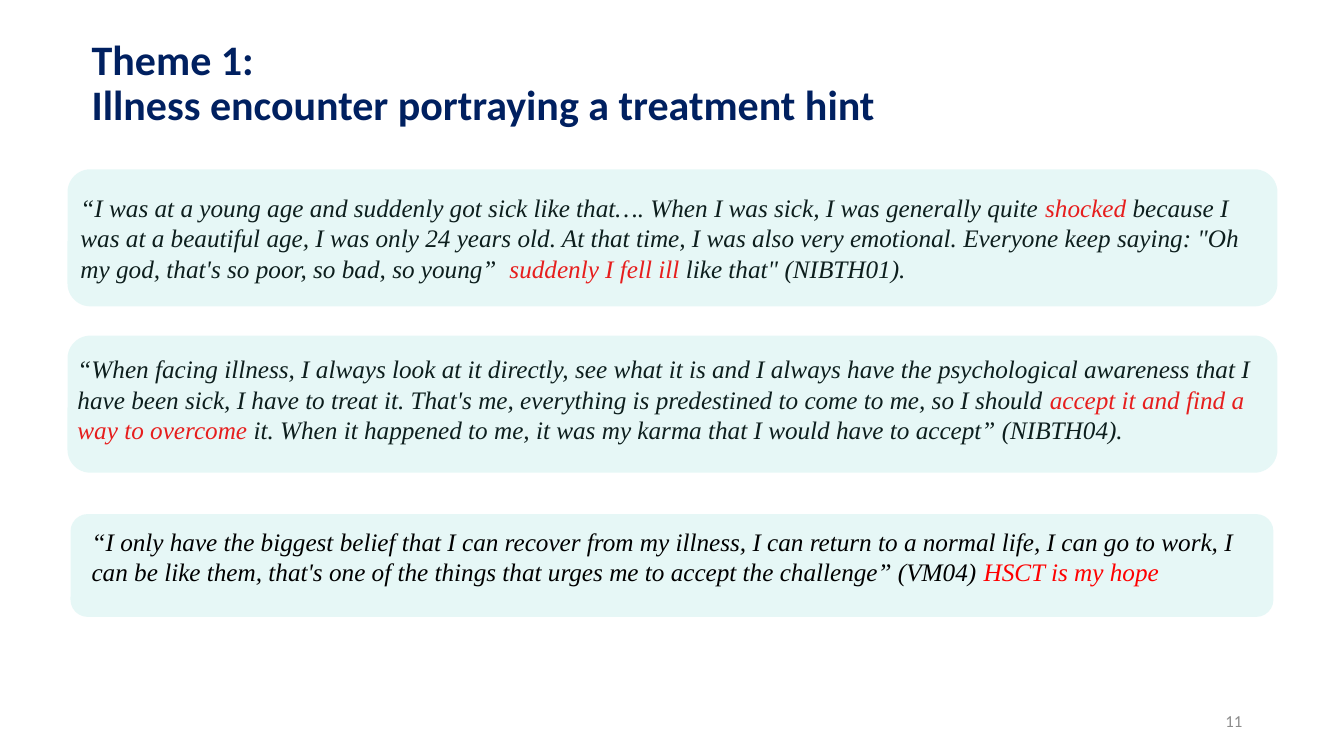
from dataclasses import dataclass
from typing import NamedTuple

from lxml import etree
from pptx import Presentation
from pptx.dml.color import RGBColor
from pptx.enum.shapes import MSO_SHAPE
from pptx.enum.text import MSO_ANCHOR, MSO_AUTO_SIZE, PP_ALIGN
from pptx.oxml.ns import qn
from pptx.slide import Slide
from pptx.text.text import TextFrame, _Paragraph
from pptx.util import Emu, Pt

PX = 9144  # 100 px to the inch
PANEL = MSO_SHAPE.FLOWCHART_ALTERNATE_PROCESS
TOP, MIDDLE = MSO_ANCHOR.TOP, MSO_ANCHOR.MIDDLE
LEFT, RIGHT = PP_ALIGN.LEFT, PP_ALIGN.RIGHT
FIXED, GROW = MSO_AUTO_SIZE.NONE, MSO_AUTO_SIZE.SHAPE_TO_FIT_TEXT


class Box(NamedTuple):
    left: int
    top: int
    width: int
    height: int

    def emu(self) -> list[Emu]:
        return [Emu(side * PX) for side in self]


@dataclass(frozen=True)
class Style:
    font: str
    size: int
    color: str
    bold: bool = False
    italic: bool = False


@dataclass(frozen=True)
class Theme:
    title: Style = Style("Calibri", 30, "002060", bold=True)
    quote: Style = Style("Times New Roman", 18, "000000", italic=True)
    accent: Style = Style("Times New Roman", 18, "FF0000", italic=True)
    number: Style = Style("Calibri", 12, "8C8C8C")
    panel: str = "5BCEC7"
    alpha: int = 15


class Run(NamedTuple):
    text: str
    style: Style


class Quote(NamedTuple):
    box: Box
    runs: list[Run]


THEME = Theme()
BODY, KEY = THEME.quote, THEME.accent

TITLE = ["Theme 1:", "Illness encounter portraying a treatment hint"]

SHOCK = Quote(Box(70, 186, 1187, 101), [
    Run("“I was at a young age and suddenly got sick like that…. "
        "When I was sick, I was generally quite ", BODY),
    Run("shocked ", KEY),
    Run("because I was at a beautiful age, I was only 24 years old. "
        "At that time, I was also very emotional. Everyone keep saying: "
        "\"Oh my god, that's so poor, so bad, so young”  ", BODY),
    Run("suddenly I fell ill ", KEY),
    Run("like that\" (NIBTH01).", BODY),
])
ACCEPT = Quote(Box(67, 346, 1187, 101), [
    Run("“When facing illness, I always look at it directly, see what it is "
        "and I always have the psychological awareness that I have been sick, "
        "I have to treat it. That's me, everything is predestined to come "
        "to me, so I should ", BODY),
    Run("accept it and find a way to overcome", KEY),
    Run(" it. When it happened to me, it was my karma that I would have "
        "to accept” (NIBTH04).", BODY),
])
HOPE = Quote(Box(81, 517, 1158, 71), [
    Run("“I only have the biggest belief that I can recover from my illness, "
        "I can return to a normal life, I can go to work, I can be like them, "
        "that's one of the things that urges me to accept the challenge” "
        "(VM04) ", BODY),
    Run("HSCT is my hope", KEY),
])
PANELS = [
    Box(67, 168, 1200, 136),
    Box(67, 333, 1200, 136),
    Box(70, 510, 1193, 102),
]


def add_runs(para: _Paragraph, runs: list[Run]) -> None:
    for text, style in runs:
        run = para.add_run()
        run.text = text
        font = run.font
        font.name, font.size = style.font, Pt(style.size)
        font.bold, font.italic = style.bold, style.italic
        font.color.rgb = RGBColor.from_string(style.color)


def add_text(slide: Slide, box: Box, runs: list[Run]) -> TextFrame:
    frame = slide.shapes.add_textbox(*box.emu()).text_frame
    frame.word_wrap = True
    frame.auto_size = GROW
    add_runs(frame.paragraphs[0], runs)
    return frame


def add_panel(slide: Slide, box: Box) -> None:
    panel = slide.shapes.add_shape(PANEL, *box.emu())
    panel.shadow.inherit = False
    panel.line.fill.background()
    panel.fill.solid()
    panel.fill.fore_color.rgb = RGBColor.from_string(THEME.panel)
    color = panel.fill._xPr.find(".//" + qn("a:srgbClr"))
    etree.SubElement(color, qn("a:alpha"), val=str(THEME.alpha * 1000))


def set_title(slide: Slide, box: Box, lines: list[str]) -> None:
    title = slide.shapes.title
    title.left, title.top, title.width, title.height = box.emu()
    frame = title.text_frame
    frame.word_wrap = True
    frame.auto_size = FIXED
    frame.vertical_anchor = TOP
    for index, line in enumerate(lines):
        para = frame.add_paragraph() if index else frame.paragraphs[0]
        para.alignment = LEFT
        para.line_spacing = 0.9
        para.space_before = Pt(0)
        add_runs(para, [Run(line, THEME.title)])


def main() -> None:
    deck = Presentation()
    deck.slide_width, deck.slide_height = Emu(1333 * PX), Emu(750 * PX)
    slide = deck.slides.add_slide(deck.slide_layouts[5])
    set_title(slide, Box(81, 34, 1036, 70), TITLE)

    # Slide number
    number = add_text(slide, Box(942, 695, 300, 40), [Run("11", THEME.number)])
    number.auto_size = FIXED
    number.vertical_anchor = MIDDLE
    number.paragraphs[0].alignment = RIGHT

    # The first two quotes lie under the tinted panels, the last one above
    for quote in (SHOCK, ACCEPT):
        add_text(slide, *quote)
    for box in PANELS:
        add_panel(slide, box)
    add_text(slide, *HOPE)

    deck.save("out.pptx")


if __name__ == "__main__":
    main()
